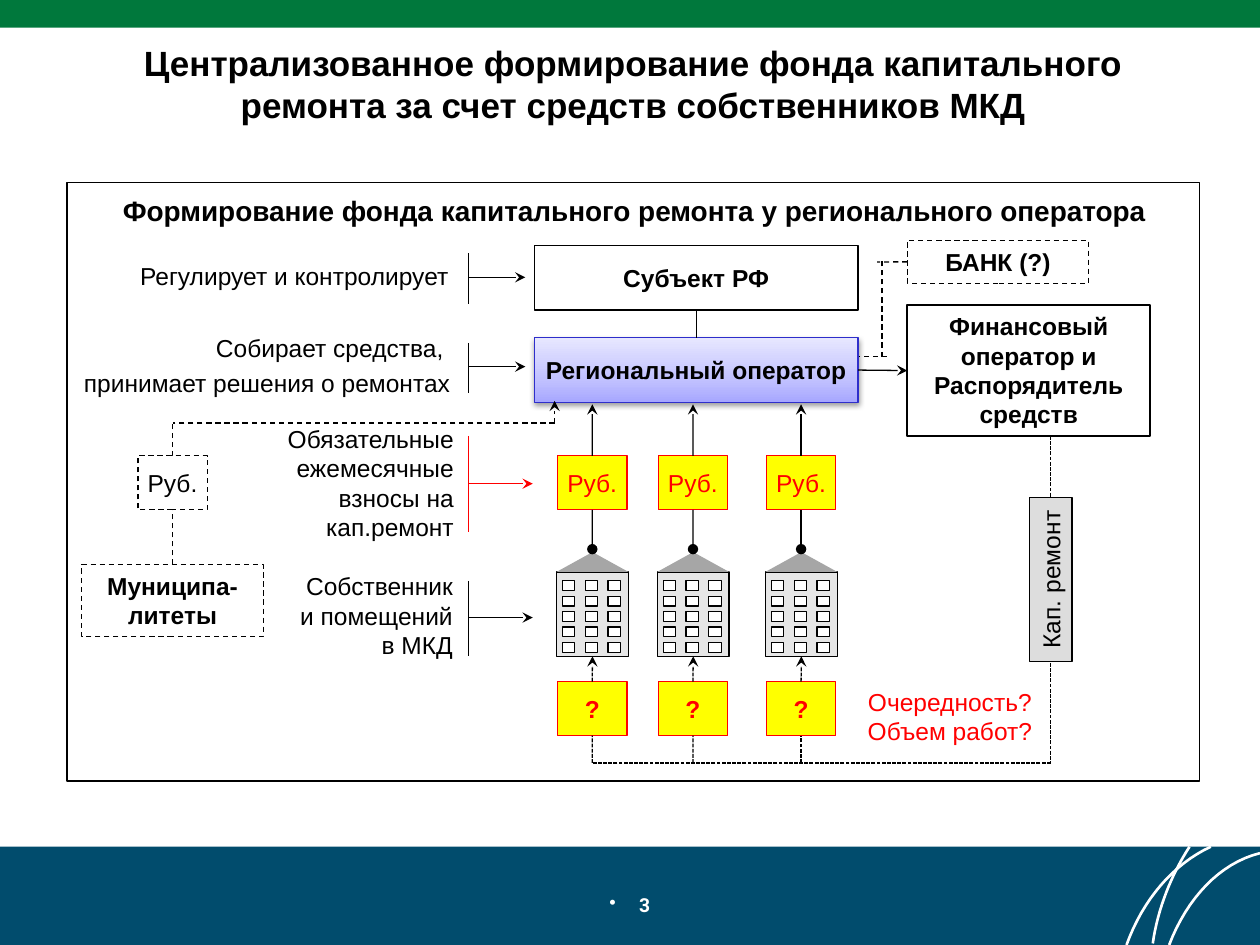
from dataclasses import dataclass
from typing import Optional

import lxml.etree
import pptx
import pptx.dml.color
import pptx.enum.dml
import pptx.enum.shapes
import pptx.enum.text
import pptx.oxml.ns
import pptx.util

Cm, Pt = pptx.util.Cm, pptx.util.Pt
KIND = pptx.enum.shapes.MSO_SHAPE
ALIGN = pptx.enum.text.PP_ALIGN
ANCHOR = pptx.enum.text.MSO_ANCHOR
DASH = pptx.enum.dml.MSO_LINE.DASH
DOTS = pptx.enum.dml.MSO_LINE.SQUARE_DOT

HUES = {
    "black": "000000", "white": "FFFFFF", "red": "FF0000", "yellow": "FFFF00",
    "green": "00783C", "navy": "014C6D", "wall": "E6E6E6", "roof": "A6A6A6",
    "gray": "DDDDDD", "violet": "2E2ECB",
    "deep": "A7A7FF", "mid": "C1C1FF", "pale": "E7E7FF",
}


@dataclass
class Box:
    left: float
    top: float
    width: float
    height: float
    text: str = ""
    fill: Optional[str] = None
    edge: Optional[str] = None
    weight: float = 0.75
    dash: object = None
    ink: str = "black"
    bold: bool = False
    size: float = 14
    font: str = "Arial"
    align: object = ALIGN.CENTER
    anchor: object = ANCHOR.MIDDLE
    wrap: bool = True
    kind: object = KIND.RECTANGLE


@dataclass
class Mark:
    label: Box
    top: float
    base: float
    axis: float
    tip: float
    hue: str = "black"


def tint(name: str):
    return pptx.dml.color.RGBColor.from_string(HUES[name])


def apply(target, values: dict) -> None:
    for key, value in values.items():
        setattr(target, key, value)


def add_node(parent, tag: str, **attrs):
    return lxml.etree.SubElement(parent, pptx.oxml.ns.qn(tag), attrs)


def write(shape, box: Box) -> None:
    frame = shape.text_frame
    apply(frame, {"word_wrap": box.wrap, "vertical_anchor": box.anchor})
    for i, text in enumerate(box.text.split("\n")):
        para = frame.add_paragraph() if i else frame.paragraphs[0]
        para.alignment = box.align
        if i:
            para.space_before = Pt(3)
        run = para.add_run()
        run.text = text
        apply(run.font, {"name": box.font, "size": Pt(box.size), "bold": box.bold})
        run.font.color.rgb = tint(box.ink)


def draw(shapes, box: Box):
    area = [Cm(v) for v in (box.left, box.top, box.width, box.height)]
    if box.fill or box.edge:
        shape = shapes.add_shape(box.kind, *area)
        shape.shadow.inherit = False
        if box.fill:
            shape.fill.solid()
            shape.fill.fore_color.rgb = tint(box.fill)
        else:
            shape.fill.background()
        if box.edge:
            shape.line.color.rgb = tint(box.edge)
            apply(shape.line, {"width": Pt(box.weight), "dash_style": box.dash})
        else:
            shape.line.fill.background()
    else:
        shape = shapes.add_textbox(*area)
    if box.text:
        write(shape, box)
    return shape


def link(shapes, start, end, hue="black", dash=None, head=None, tail=None):
    """Each end is a point (x, y) in cm or a joint (shape, side)."""
    joints = [isinstance(e[0], (int, float)) is False for e in (start, end)]
    points = [(0, 0) if j else (Cm(e[0]), Cm(e[1])) for j, e in zip(joints, (start, end))]
    line = shapes.add_connector(
        pptx.enum.shapes.MSO_CONNECTOR.STRAIGHT, *points[0], *points[1])
    if joints[0]:
        line.begin_connect(*start)
    if joints[1]:
        line.end_connect(*end)
    line.line.color.rgb = tint(hue)
    apply(line.line, {"width": Pt(0.75), "dash_style": dash})
    stroke = line.line._get_or_add_ln()
    for tag, tip in (("a:headEnd", head), ("a:tailEnd", tail)):
        if tip:
            add_node(stroke, tag, type=tip)
    add_node(line._element.spPr, "a:effectLst")
    return line


def curve(shapes, *knots, steps: int = 16) -> None:
    """Draw an open cubic arc through four control points in cm."""
    points = []
    for i in range(steps + 1):
        t = i / steps
        parts = ((1 - t) ** 3, 3 * t * (1 - t) ** 2, 3 * t * t * (1 - t), t ** 3)
        points.append([Cm(sum(p * k[a] for p, k in zip(parts, knots))) for a in (0, 1)])
    path = shapes.build_freeform(*points[0])
    path.add_line_segments(points[1:], close=False)
    arc = path.convert_to_shape()
    arc.shadow.inherit = False
    arc.fill.background()
    arc.line.color.rgb = tint("white")
    arc.line.width = Pt(1.5)


def house(shapes, axis: float):
    group = shapes.add_group_shape().shapes
    left, top = axis - 0.72, 11.53
    wall = draw(group, Box(left, top, 1.45, 1.7, fill="wall", edge="black"))
    for row in range(5):
        for col in range(3):
            draw(group, Box(left + 0.12 + 0.46 * col, top + 0.18 + 0.31 * row,
                            0.25, 0.2, fill="white", edge="black"))
    draw(group, Box(left, 11.13, 1.45, 0.4, fill="roof", kind=KIND.FLOWCHART_EXTRACT))
    return wall


def glow(shape) -> None:
    """Give the operator its gradient and soft shadow."""
    shape.fill.gradient()
    shape.fill.gradient_angle = 90
    stops = shape._element.spPr.find(".//" + pptx.oxml.ns.qn("a:gsLst"))
    for stop in list(stops):
        stops.remove(stop)
    for pos, hue in ((0, "deep"), (35, "mid"), (100, "pale")):
        add_node(add_node(stops, "a:gs", pos=str(pos * 1000)), "a:srgbClr", val=HUES[hue])
    effects = shape._element.spPr.find(pptx.oxml.ns.qn("a:effectLst"))
    shade = add_node(effects, "a:outerShdw", blurRad=str(Pt(3.1)), dist=str(Pt(1.6)),
                     dir="5400000", rotWithShape="0")
    add_node(add_node(shade, "a:srgbClr", val=HUES["black"]), "a:alpha", val="38000")


def main() -> None:
    deck = pptx.Presentation()
    apply(deck, {"slide_width": Cm(25.4), "slide_height": Cm(19.05)})
    shapes = deck.slides.add_slide(deck.slide_layouts[6]).shapes

    # Bands, arcs, title and page number
    draw(shapes, Box(0, 17.07, 25.4, 1.98, fill="navy"))
    curve(shapes, (24.41, 17.07), (23.65, 17.42), (23.04, 18.14), (22.71, 19.05))
    curve(shapes, (25.4, 17.2), (24.59, 17.4), (23.93, 18.11), (23.57, 19.05))
    curve(shapes, (23.98, 17.07), (23.62, 17.63), (23.34, 18.31), (23.24, 19.02))
    draw(shapes, Box(0, 0, 25.4, 0.56, fill="green"))
    draw(shapes, Box(1.35, 3.68, 22.83, 12.07, fill="white", edge="black", weight=1))
    page = draw(shapes, Box(10.08, 17.88, 5.23, 0.79, "3", ink="white", bold=True,
                            size=11, font="Roboto", anchor=ANCHOR.TOP))
    props = page.text_frame.paragraphs[0]._p.get_or_add_pPr()
    apply_indent = {"marL": str(Cm(0.6)), "indent": str(-Cm(0.6))}
    for key, value in apply_indent.items():
        props.set(key, value)
    add_node(props, "a:buChar", char="•")
    draw(shapes, Box(1.35, 0.71, 22.83, 1.96, "Централизованное формирование фонда капитального "
                     "ремонта за счет средств собственников МКД",
                     bold=True, size=20, anchor=ANCHOR.TOP))
    draw(shapes, Box(1.85, 3.78, 21.89, 0.94, "Формирование фонда капитального ремонта "
                     "у регионального оператора", fill="white", bold=True, size=16))

    # Region, operator, finance and bank
    region = draw(shapes, Box(10.77, 4.95, 6.53, 1.3, "Субъект РФ", "white", "black",
                              bold=True, wrap=False))
    agent = draw(shapes, Box(10.77, 6.81, 6.53, 1.3, "Региональный оператор", "pale",
                             "violet", bold=True, wrap=False))
    glow(agent)
    funds = draw(shapes, Box(18.29, 6.15, 4.9, 2.64, "Финансовый оператор и Распорядитель средств",
                             edge="black", weight=1.25, bold=True, anchor=ANCHOR.TOP))
    bank = draw(shapes, Box(18.29, 4.85, 3.66, 0.86, "БАНК (?)", "white", "black",
                            dash=DASH, bold=True))
    link(shapes, (region, 2), (agent, 0))
    link(shapes, (agent, 3), (funds, 1), tail="stealth")
    link(shapes, (bank, 1), (17.68, 5.28), dash=DASH)
    link(shapes, (17.78, 7.19), (17.78, 5.24), dash=DASH)
    link(shapes, (17.88, 7.19), (17.32, 7.19), dash=DASH)

    # Houses with their payments and open questions
    for axis in (11.94, 13.97, 16.15):
        wall = house(shapes, axis)
        pay, ask = (draw(shapes, Box(axis - 0.7, top, 1.4, 1.09, text, "yellow", "red",
                                     ink="red", bold=bold, wrap=False))
                    for top, text, bold in ((9.19, "Руб.", False), (13.74, "?", True)))
        link(shapes, (pay, 0), (axis, 8.15), tail="stealth")
        link(shapes, (axis, 11.07), (pay, 2), head="oval")
        link(shapes, (ask, 0), (wall, 2), dash=DOTS, tail="stealth")
        link(shapes, (axis, 15.38), (ask, 2), dash=DOTS)

    # Repair route
    link(shapes, (21.18, 15.38), (11.94, 15.38), dash=DOTS)
    link(shapes, (21.18, 8.79), (21.18, 15.38), dash=DOTS)
    draw(shapes, Box(19.53, 11.25, 3.3, 0.86, "Кап. ремонт", "gray", "black",
                     wrap=False)).rotation = 270
    draw(shapes, Box(17.22, 13.72, 3.86, 1.45, "Очередность? Объем работ?", ink="red",
                     anchor=ANCHOR.TOP))

    # Labels with bracket arrows
    right = ALIGN.RIGHT
    for mark in (
        Mark(Box(2.39, 5.13, 7.04, 0.86, "Регулирует и контролирует ", align=right),
             5.11, 6.12, 5.59, 10.59),
        Mark(Box(1.35, 6.58, 7.98, 1.57, "Собирает средства, \nпринимает решения о ремонтах",
                 align=right), 6.91, 7.92, 7.39, 10.59),
        Mark(Box(5.44, 8.41, 3.96, 2.64, "Обязательные ежемесячные взносы на кап.ремонт",
                 align=right), 8.79, 10.72, 9.75, 10.74, "red"),
        Mark(Box(5.77, 11.38, 3.61, 2.06, "Собственники помещений в МКД", align=right),
             11.71, 13.23, 12.45, 10.74),
    ):
        draw(shapes, mark.label)
        link(shapes, (9.45, mark.top), (9.45, mark.base), mark.hue)
        link(shapes, (9.45, mark.axis), (mark.tip, mark.axis), mark.hue, tail="stealth")

    # Towns and their payment route
    towns = draw(shapes, Box(1.65, 11.38, 3.66, 1.45, "Муниципа-литеты", "white", "black",
                             dash=DASH, bold=True))
    link(shapes, (towns, 0), (3.48, 8.53), dash=DASH)
    link(shapes, (11.18, 8.53), (3.48, 8.53), dash=DASH)
    link(shapes, (11.18, 8.53), (11.18, 8.08), dash=DASH, tail="stealth")
    draw(shapes, Box(2.78, 9.19, 1.4, 1.09, "Руб.", "white", "black", dash=DASH, wrap=False))

    deck.save("out.pptx")


if __name__ == "__main__":
    main()
